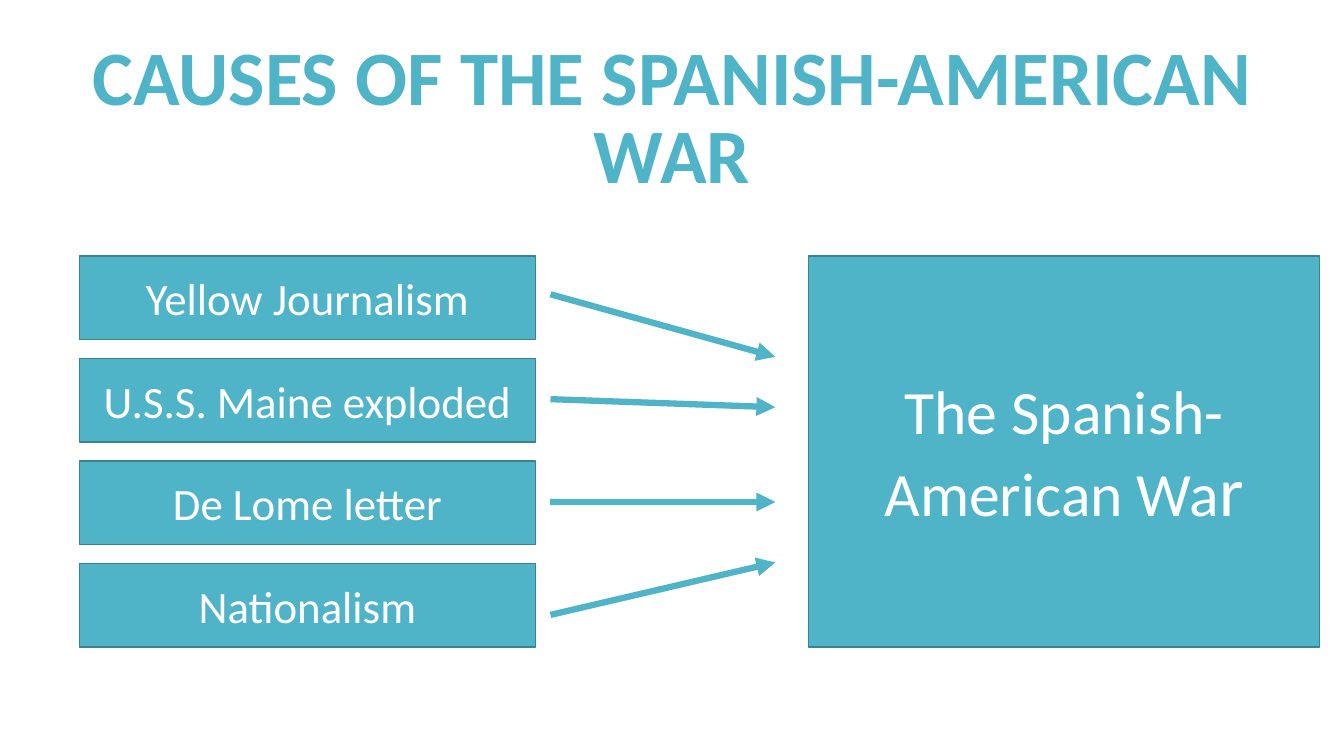
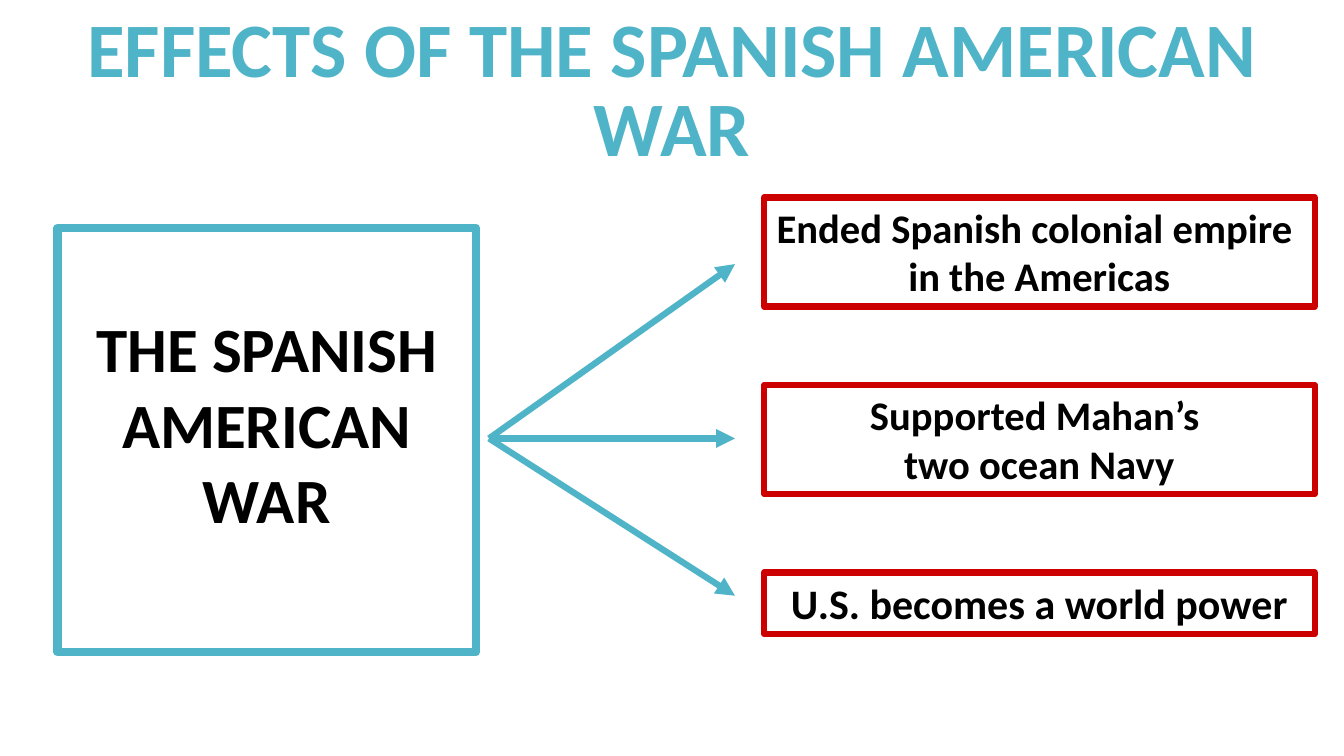
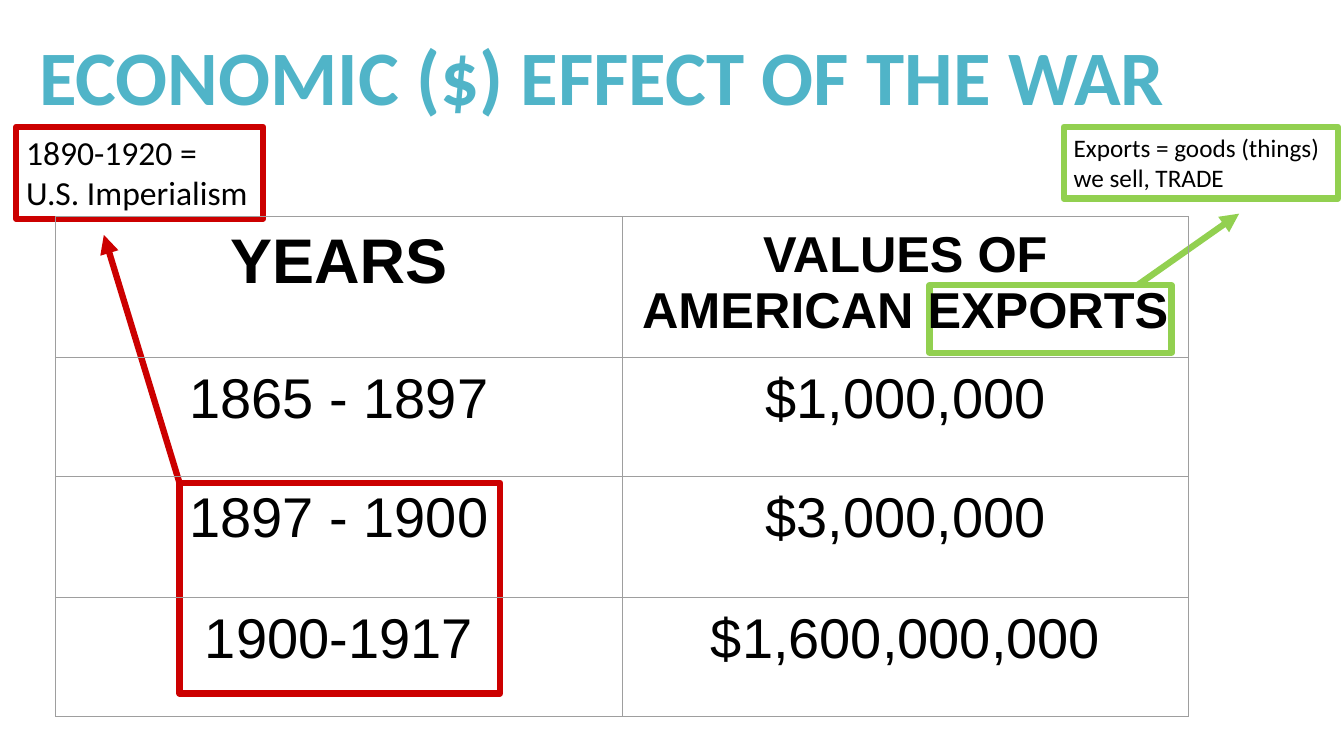
import pptx
import pptx.dml.color
import pptx.enum.shapes
import pptx.enum.text
import pptx.oxml
import pptx.oxml.ns
import pptx.util
from lxml import etree

Inches = pptx.util.Inches
Pt = pptx.util.Pt
ALIGN = pptx.enum.text.PP_ALIGN
ANCHOR = pptx.enum.text.MSO_ANCHOR

TEAL, DARK_TEAL = "50B4C8", "3A8391"
RED, GREEN, GREY = "CC0000", "92D050", "9E9E9E"
BLACK, WHITE = "000000", "FFFFFF"
THICK = 4.5


def rgb(value):
    return pptx.dml.color.RGBColor.from_string(value)


def add_run(paragraph, text, size, color=BLACK, bold=False, name="Calibri"):
    run = paragraph.add_run()
    run.text = text
    for attribute, value in {"size": Pt(size), "bold": bold, "name": name}.items():
        setattr(run.font, attribute, value)
    run.font.color.rgb = rgb(color)


def write(frame, lines, size, align=ALIGN.CENTER, anchor=ANCHOR.TOP, spacing=None, **font):
    """Fill a text frame with one paragraph per line."""
    frame.word_wrap = True
    frame.vertical_anchor = anchor
    for index, line in enumerate(lines):
        paragraph = frame.add_paragraph() if index else frame.paragraphs[0]
        paragraph.alignment = align
        if spacing:
            paragraph.line_spacing = spacing
        add_run(paragraph, line, size, **font)


def add_title(slide, text, left, top, width, height, align=ALIGN.CENTER):
    title = slide.shapes.add_textbox(Inches(left), Inches(top), Inches(width), Inches(height))
    write(title.text_frame, [text], 55, align, ANCHOR.MIDDLE, 0.85, color=TEAL, bold=True)


def add_box(slide, left, top, width, height, line, weight=THICK, fill=None):
    box = slide.shapes.add_shape(
        pptx.enum.shapes.MSO_SHAPE.RECTANGLE,
        Inches(left), Inches(top), Inches(width), Inches(height))
    box.shadow.inherit = False
    if fill:
        box.fill.solid()
        box.fill.fore_color.rgb = rgb(fill)
    else:
        box.fill.background()
    box.line.color.rgb = rgb(line)
    box.line.width = Pt(weight)
    return box


def add_filled_box(slide, left, top, width, height, text, size):
    box = add_box(slide, left, top, width, height, DARK_TEAL, 1, TEAL)
    write(box.text_frame, [text], size, anchor=ANCHOR.MIDDLE, color=WHITE)
    return box


def add_arrow(slide, start, end, color=TEAL):
    arrow = slide.shapes.add_connector(
        pptx.enum.shapes.MSO_CONNECTOR.STRAIGHT, *map(Inches, start + end))
    arrow.line.color.rgb = rgb(color)
    arrow.line.width = Pt(THICK)
    etree.SubElement(arrow.line._get_or_add_ln(),
                     pptx.oxml.ns.qn("a:tailEnd"), type="triangle")
    etree.SubElement(arrow._element.spPr, pptx.oxml.ns.qn("a:effectLst"))


def add_borders(cell, color, weight):
    properties = cell._tc.get_or_add_tcPr()
    for index, side in enumerate(("lnL", "lnR", "lnT", "lnB")):
        border = pptx.oxml.parse_xml(
            f'<a:{side} {pptx.oxml.ns.nsdecls("a")} w="{Pt(weight)}"><a:solidFill>'
            f'<a:srgbClr val="{color}"/></a:solidFill></a:{side}>')
        properties.insert(index, border)


def add_exports_table(slide, left, top, column_width, row_heights, rows):
    """Rows hold (text, size) cells; the first row is bold."""
    columns = len(rows[0])
    table = slide.shapes.add_table(
        len(rows), columns, Inches(left), Inches(top),
        Inches(column_width * columns), Inches(sum(row_heights))).table
    table.first_row = table.horz_banding = False
    for column in table.columns:
        column.width = Inches(column_width)
    for r, (height, row) in enumerate(zip(row_heights, rows)):
        table.rows[r].height = Inches(height)
        for c, (text, size) in enumerate(row):
            cell = table.cell(r, c)
            for side in ("left", "right", "top", "bottom"):
                setattr(cell, f"margin_{side}", Inches(0.1))
            cell.fill.background()
            write(cell.text_frame, [text], size, bold=r == 0, name="Arial")
            add_borders(cell, GREY, 0.75)


def build_causes(slide):
    add_title(slide, "CAUSES OF THE SPANISH-AMERICAN WAR", 0, 0.67, 13.33, 1.06)
    causes = ["Yellow Journalism", "U.S.S. Maine exploded", "De Lome letter", "Nationalism"]
    top, total_height, cause_height = 2.54, 3.88, 0.83
    pitch = (total_height - cause_height) / (len(causes) - 1)
    for index, cause in enumerate(causes):
        add_filled_box(slide, 0.79, top + index * pitch, 4.52, cause_height, cause, 32)
    war = add_filled_box(slide, 8.02, top, 5.07, total_height, "The Spanish-American Wa", 44)
    add_run(war.text_frame.paragraphs[0], "r", 50, WHITE)
    for start_y, end_y in [(2.92, 3.54), (3.96, 4.04), (4.98, 4.98), (6.1, 5.58)]:
        add_arrow(slide, (5.46, start_y), (7.69, end_y))


def build_effects(slide):
    add_title(slide, "EFFECTS OF THE SPANISH AMERICAN WAR", 0.29, 0.02, 12.75, 1.81)
    war = add_box(slide, 0.57, 2.26, 4.15, 4.21, TEAL, 6)
    war.text_frame.margin_top = Inches(0.81)
    write(war.text_frame, ["THE SPANISH AMERICAN WAR"], 45, bold=True)
    for end_y in (2.62, 4.35, 5.91):
        add_arrow(slide, (4.85, 4.35), (7.29, end_y))
    effects = [
        (["Ended Spanish colonial empire ", "in the Americas"], 1.08, 29),
        (["Supported Mahan’s ", "two ocean Navy"], 1.08, 29),
        (["U.S. becomes a world power"], 0.61, 30),
    ]
    for index, (lines, height, size) in enumerate(effects):
        effect = add_box(slide, 7.58, 1.96 + index * 1.86, 5.46, height, RED)
        write(effect.text_frame, lines, size, bold=True)


def build_economy(slide):
    add_title(slide, "ECONOMIC ($) EFFECT OF THE WAR", 0.29, -0.09, 11.78, 1.81, ALIGN.LEFT)
    add_box(slide, 1.78, 4.79, 3.18, 2.09, RED)
    add_box(slide, 9.22, 2.83, 2.4, 0.67, GREEN)
    imperialism = add_box(slide, 0.16, 1.26, 2.45, 0.91, RED)
    write(imperialism.text_frame, ["1890-1920 =", "U.S. Imperialism"], 24, ALIGN.LEFT)
    add_arrow(slide, (1.78, 4.79), (1.03, 2.33), RED)
    exports = add_box(slide, 10.55, 1.26, 2.72, 0.71, GREEN)
    write(exports.text_frame, ["Exports = goods (things)", "we sell, TRADE"], 18, ALIGN.LEFT)
    add_arrow(slide, (11.28, 2.83), (12.29, 2.12), GREEN)
    add_exports_table(slide, 0.55, 2.15, 5.62, [1.4, 1.18, 1.2, 1.18], [
        [("YEARS", 45), ("VALUES OF AMERICAN EXPORTS", 36)],
        [("1865 - 1897", 40), ("$1,000,000", 40)],
        [("1897 - 1900", 40), ("$3,000,000", 40)],
        [("1900-1917", 40), ("$1,600,000,000", 40)],
    ])


def main():
    deck = pptx.Presentation()
    deck.slide_width, deck.slide_height = Inches(13.33), Inches(7.5)
    for build in (build_causes, build_effects, build_economy):
        build(deck.slides.add_slide(deck.slide_layouts[6]))
    deck.save("out.pptx")


if __name__ == "__main__":
    main()
